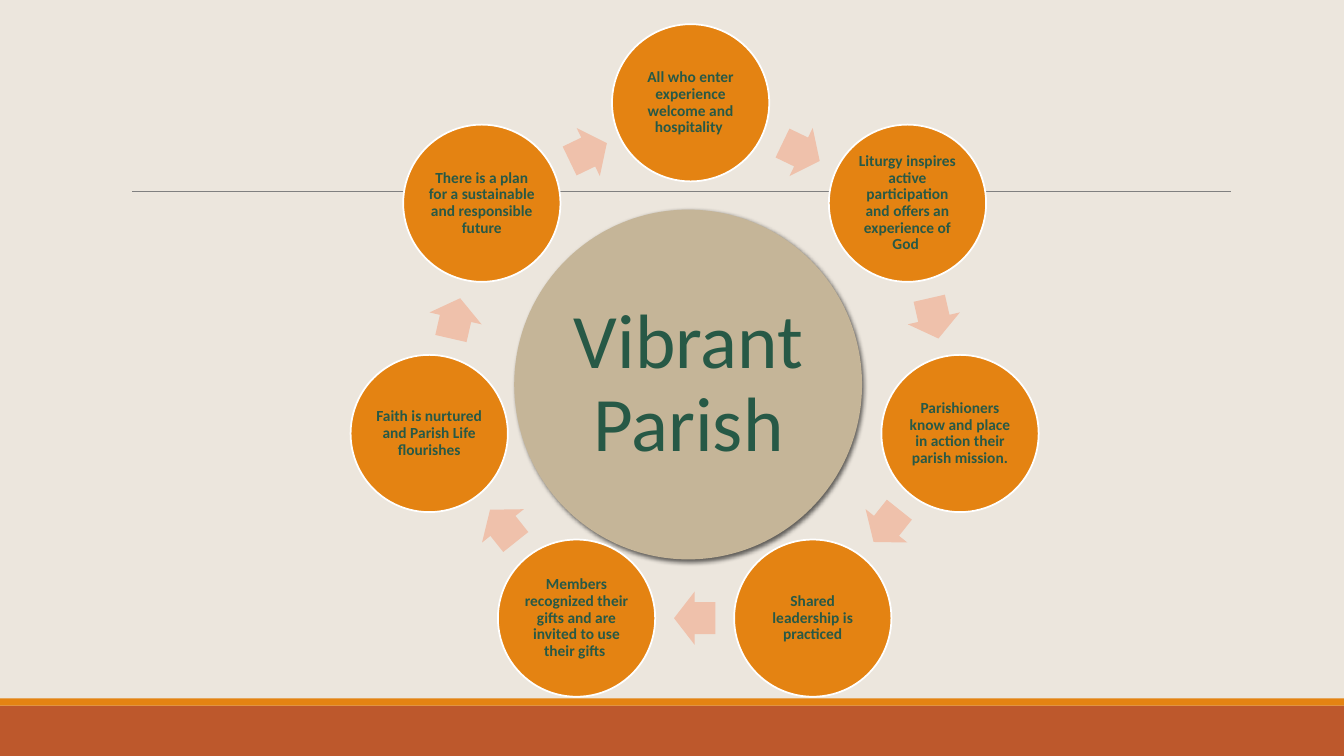
import math

from lxml import etree
from pptx import Presentation
from pptx import util as u
from pptx.dml.color import RGBColor
from pptx.enum import shapes, text
from pptx.oxml import parse_xml
from pptx.oxml.ns import nsdecls, qn

COLORS = {
    "background": "ECE6DD",
    "rust": "BD582C",
    "orange": "E48312",
    "rule": "808080",
    "sand": "C5B598",
    "green": "275946",
    "arrow": "EFC1AB",
    "white": "FFFFFF",
}
PRACTICES = [
    "All who enter experience welcome and hospitality ",
    "Liturgy inspires active participation and offers an experience of God ",
    "Parishioners know and place in action their parish mission.",
    "Shared leadership is practiced",
    "Members recognized their gifts and are invited to use their gifts ",
    "Faith is nurtured and Parish Life flourishes",
    "There is a plan for a sustainable and responsible future",
]
RING_X, RING_Y, RING_RADIUS = 6.89, 3.7, 2.7
CIRCLE_SIZE = 1.56
ARROW_LENGTH, ARROW_WIDTH = 0.41, 0.53


def add_filled(kind, left, top, width, height, color):
    """Add a preset shape with a plain fill, no outline and no shadow."""
    shape = slide.shapes.add_shape(
        kind, u.Inches(left), u.Inches(top), u.Inches(width), u.Inches(height))
    shape.shadow.inherit = False
    shape.fill.solid()
    shape.fill.fore_color.rgb = RGBColor.from_string(COLORS[color])
    shape.line.fill.background()
    return shape


def write_centred(shape, words, size, bold, inset):
    frame = shape.text_frame
    frame.text = words
    frame.word_wrap = True
    frame.auto_size = text.MSO_AUTO_SIZE.NONE
    frame.vertical_anchor = text.MSO_ANCHOR.MIDDLE
    frame.margin_left = frame.margin_right = u.Inches(inset)
    frame.margin_top = frame.margin_bottom = u.Inches(inset)
    paragraph = frame.paragraphs[0]
    paragraph.alignment = text.PP_ALIGN.CENTER
    paragraph.line_spacing = 0.9
    paragraph.space_before = u.Pt(0)
    font = paragraph.runs[0].font
    font.name = "Calibri"
    font.size = u.Pt(size)
    font.bold = bold
    font.color.rgb = RGBColor.from_string(COLORS["green"])


presentation = Presentation()
presentation.slide_width = u.Inches(13.33)
presentation.slide_height = u.Inches(7.5)
slide = presentation.slides.add_slide(presentation.slide_layouts[5])
slide.background.fill.solid()
slide.background.fill.fore_color.rgb = RGBColor.from_string(COLORS["background"])

# Footer bands and rule
add_filled(shapes.MSO_SHAPE.RECTANGLE, 0, 7, 13.33, 0.5, "rust")
add_filled(shapes.MSO_SHAPE.RECTANGLE, 0, 6.93, 13.33, 0.07, "orange")
rule = slide.shapes.add_connector(
    shapes.MSO_CONNECTOR.STRAIGHT,
    u.Inches(1.31), u.Inches(1.9), u.Inches(12.21), u.Inches(1.9))
rule.line.color.rgb = RGBColor.from_string(COLORS["rule"])
rule.line.width = u.Pt(0.5)
etree.SubElement(rule._element.spPr, qn("a:effectLst"))

# Centre circle, with the title placed on top of it
hub = add_filled(shapes.MSO_SHAPE.OVAL, 5.1, 2.08, 3.45, 3.47, "sand")
hub_effects = hub._element.spPr.find(qn("a:effectLst"))
hub_effects.append(parse_xml(
    f'<a:outerShdw {nsdecls("a")} blurRad="{u.Pt(3.5)}" dist="{u.Pt(2)}" '
    'dir="2700000" algn="tl" rotWithShape="0">'
    '<a:srgbClr val="000000"><a:alpha val="60000"/></a:srgbClr></a:outerShdw>'))
title = slide.shapes.title
title.left, title.top = u.Inches(5.61), u.Inches(2.59)
title.width, title.height = u.Inches(2.44), u.Inches(2.46)
write_centred(title, "Vibrant Parish", 55, False, 0.08)
hub._element.addnext(title._element)

# Ring of practices, each followed by an arrow to the next one
step = 2 * math.pi / len(PRACTICES)
arrow_radius = RING_RADIUS * math.cos(step / 2)
for index, practice in enumerate(PRACTICES):
    angle = index * step
    center_x = RING_X + RING_RADIUS * math.sin(angle)
    center_y = RING_Y - RING_RADIUS * math.cos(angle)
    if index == 0:  # the top circle sits slightly off the ring
        center_x, center_y = 6.85, 1.02
    circle = add_filled(
        shapes.MSO_SHAPE.OVAL, center_x - CIRCLE_SIZE / 2,
        center_y - CIRCLE_SIZE / 2, CIRCLE_SIZE, CIRCLE_SIZE, "orange")
    circle.line.color.rgb = RGBColor.from_string(COLORS["white"])
    circle.line.width = u.Pt(1.25)
    write_centred(circle, practice, 11, True, 0.02)

    arrow_angle = angle + step / 2
    arrow = add_filled(
        shapes.MSO_SHAPE.RIGHT_ARROW,
        RING_X + arrow_radius * math.sin(arrow_angle) - ARROW_LENGTH / 2,
        RING_Y - arrow_radius * math.cos(arrow_angle) - ARROW_WIDTH / 2,
        ARROW_LENGTH, ARROW_WIDTH, "arrow")
    arrow.adjustments[0] = 0.6
    arrow.adjustments[1] = 0.5
    arrow.rotation = math.degrees(arrow_angle)

presentation.save("out.pptx")
